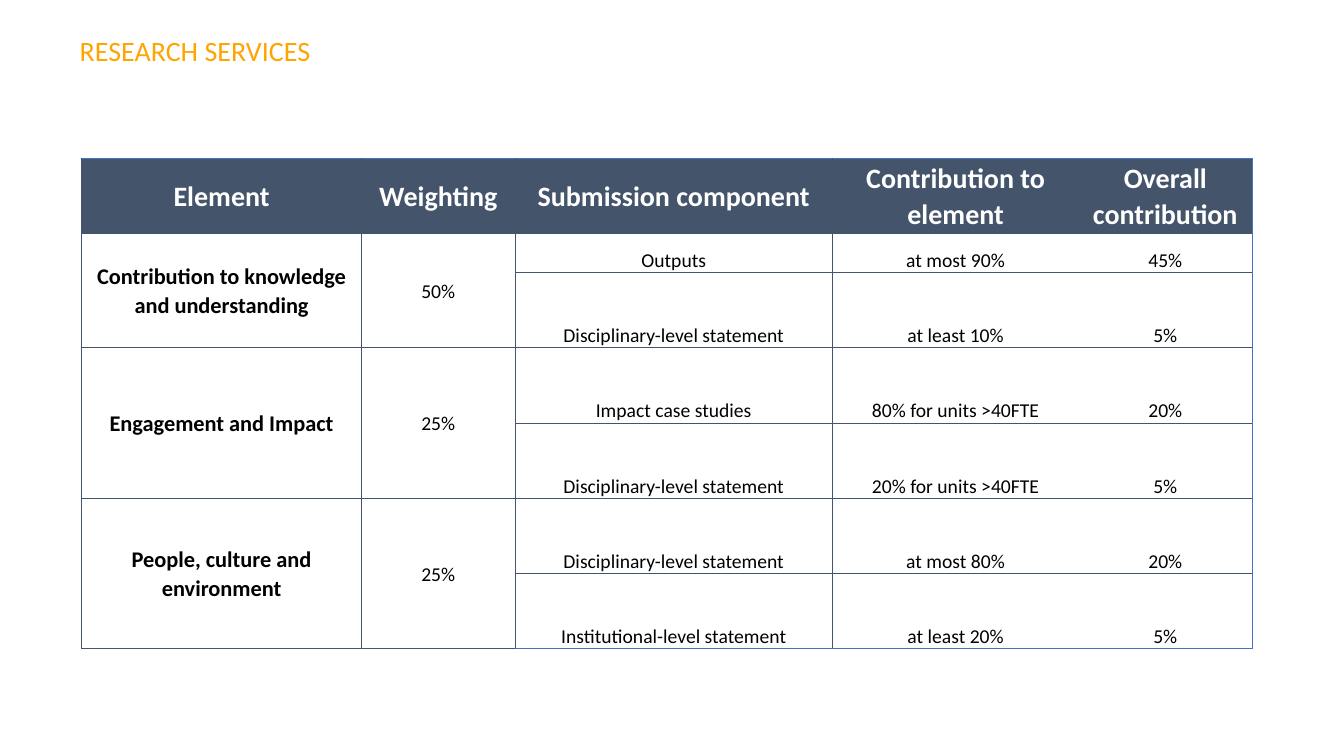
from lxml.etree import SubElement
from pptx import Presentation
from pptx.dml.color import RGBColor
from pptx.enum.text import MSO_ANCHOR as Anchor, PP_ALIGN as Align
from pptx.oxml.ns import qn
from pptx.util import Pt

FONT = "Calibri"
ORANGE = RGBColor(0xFF, 0xA4, 0x00)
SLATE = RGBColor(0x44, 0x54, 0x6A)
BLUE = RGBColor(0x44, 0x72, 0xC4)
WHITE = RGBColor(0xFF, 0xFF, 0xFF)
BLACK = RGBColor(0x00, 0x00, 0x00)

COLUMN_WIDTHS = [200, 109.5, 227, 175.7, 123.8]
ROW_HEIGHTS = [53.7, 27.9] + [53.8] * 5
HEADINGS = ["Element", "Weighting", "Submission component",
            "Contribution to element", "Overall contribution"]
# Each element has a weighting and two submission components
ELEMENTS = [
    ("Contribution to knowledge and understanding", "50%",
     [("Outputs", "at most 90%", "45%"),
      ("Disciplinary-level statement", "at least 10%", "5%")]),
    ("Engagement and Impact", "25%",
     [("Impact case studies", "80% for units >40FTE", "20%"),
      ("Disciplinary-level statement", "20% for units >40FTE", "5%")]),
    ("People, culture and environment", "25%",
     [("Disciplinary-level statement", "at most 80%", "20%"),
      ("Institutional-level statement", "at least 20%", "5%")]),
]


def format_font(font, size, color, bold=False):
    font.name = FONT
    font.size = Pt(size)
    font.bold = bold
    font.color.rgb = color


def add_heading(slide, text):
    heading = slide.shapes.title
    heading.left, heading.top = Pt(49.7), Pt(20.2)
    heading.width, heading.height = Pt(531.4), Pt(31.7)
    frame = heading.text_frame
    frame.text = text
    frame.word_wrap = True
    frame.vertical_anchor = Anchor.TOP
    paragraph = frame.paragraphs[0]
    paragraph.alignment = Align.LEFT
    format_font(paragraph.runs[0].font, 20, ORANGE)


def set_border(cell, side, color):
    """Draw one side of a cell, or leave it open when color is None."""
    line = SubElement(cell._tc.get_or_add_tcPr(), qn(f"a:ln{side}"), w=str(Pt(0.5)))
    if color is None:
        SubElement(line, qn("a:noFill"))
    else:
        fill = SubElement(line, qn("a:solidFill"))
        SubElement(fill, qn("a:srgbClr"), val=str(color))


def rule_cell(cell, row, column):
    last_row, last_column = len(ROW_HEIGHTS) - 1, len(COLUMN_WIDTHS) - 1
    # The two contribution columns have no line between them
    set_border(cell, "L", None if column == last_column else SLATE)
    set_border(cell, "R", {last_column - 1: None, last_column: BLUE}.get(column, SLATE))
    set_border(cell, "T", BLUE if row == 0 else SLATE)
    set_border(cell, "B", BLUE if row == last_row and column > 1 else SLATE)


def fill_cell(cell, text, size, color=BLACK, bold=False, anchor=Anchor.MIDDLE):
    cell.text_frame.text = text
    cell.vertical_anchor = anchor
    cell.margin_left = cell.margin_right = Pt(5)
    cell.margin_top = cell.margin_bottom = Pt(0)
    paragraph = cell.text_frame.paragraphs[0]
    paragraph.alignment = Align.CENTER
    paragraph.line_spacing = 1.07
    paragraph.space_after = Pt(8)
    format_font(paragraph.runs[0].font, size, color, bold)


def add_weighting_table(slide):
    table = slide.shapes.add_table(
        len(ROW_HEIGHTS), len(COLUMN_WIDTHS), Pt(58.3), Pt(113),
        Pt(sum(COLUMN_WIDTHS)), Pt(sum(ROW_HEIGHTS))).table
    table.horz_banding = False
    for column, width in zip(table.columns, COLUMN_WIDTHS):
        column.width = Pt(width)

    # Borders and fills
    for r, height in enumerate(ROW_HEIGHTS):
        table.rows[r].height = Pt(height)
        for c in range(len(COLUMN_WIDTHS)):
            cell = table.cell(r, c)
            rule_cell(cell, r, c)
            if r == 0:
                cell.fill.solid()
                cell.fill.fore_color.rgb = SLATE
            else:
                cell.fill.background()

    # Header row
    for c, heading in enumerate(HEADINGS):
        fill_cell(table.cell(0, c), heading, 20, WHITE, bold=True)

    # Element groups
    for group, (element, weighting, components) in enumerate(ELEMENTS):
        top = 1 + 2 * group
        for c in (0, 1):
            table.cell(top, c).merge(table.cell(top + 1, c))
        fill_cell(table.cell(top, 0), element, 16, bold=True)
        fill_cell(table.cell(top, 1), weighting, 14)
        for r, component in enumerate(components, top):
            for c, text in enumerate(component, 2):
                fill_cell(table.cell(r, c), text, 14, anchor=Anchor.BOTTOM)


def main():
    deck = Presentation()
    deck.slide_width, deck.slide_height = Pt(960), Pt(540)
    slide = deck.slides.add_slide(deck.slide_layouts[5])
    add_heading(slide, "RESEARCH SERVICES")
    add_weighting_table(slide)
    deck.save("out.pptx")


if __name__ == "__main__":
    main()
